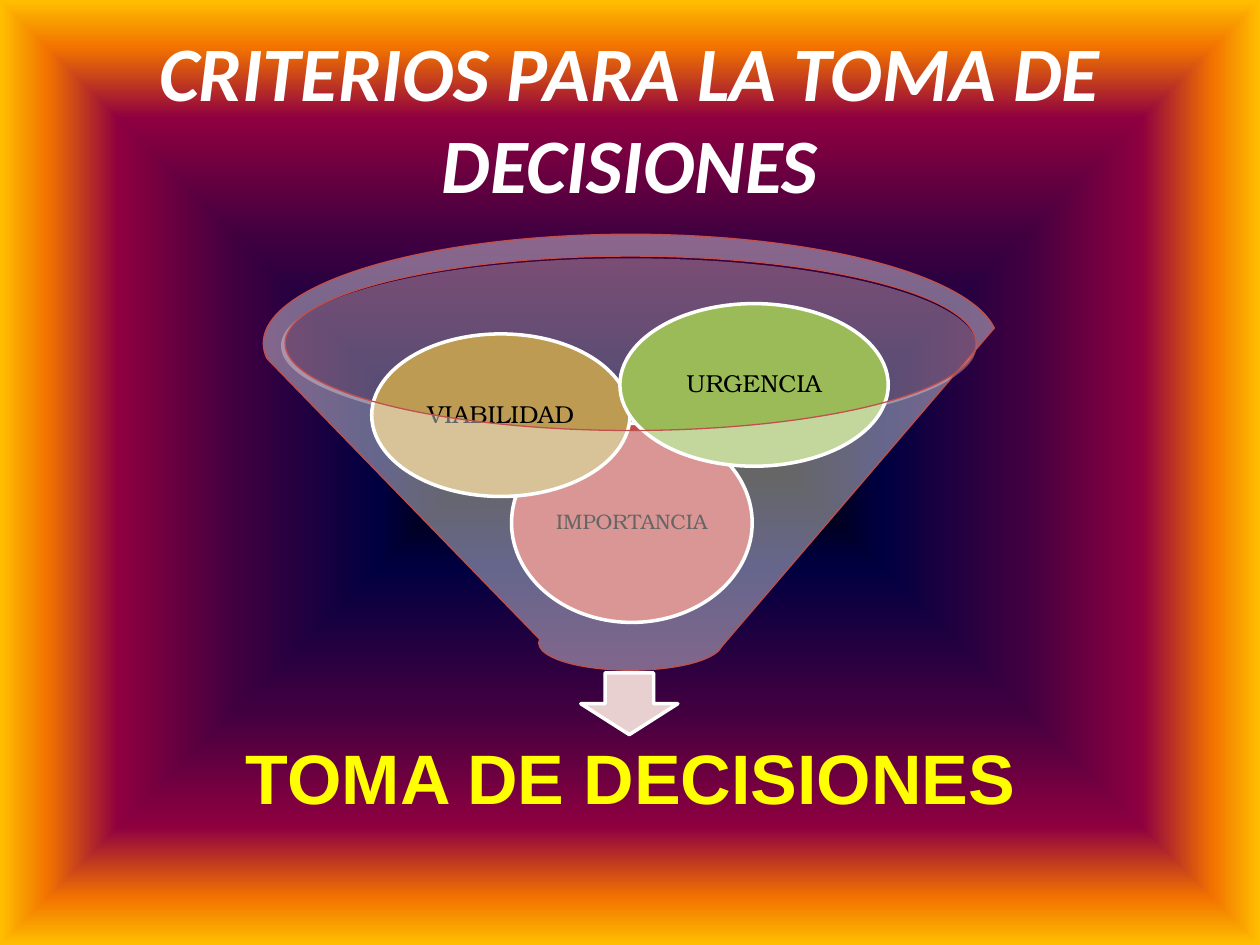
from lxml import etree
from pptx import Presentation
from pptx.dml.color import RGBColor
from pptx.enum import shapes, text
from pptx.oxml import parse_xml
from pptx.oxml.ns import nsdecls, qn
from pptx.util import Inches, Pt

COLORS = {
    "white": "FFFFFF", "black": "000000", "yellow": "FFFF00",
    "red": "C0504D", "tan": "BD9B53", "green": "9BBB59",
    "rim": "E2C2C2", "arrow": "E8D0D0",
}
BACKGROUND_STOPS = [(0, "000000"), (20, "000040"), (50, "400040"),
                    (75, "8F0040"), (90, "F27300"), (100, "FFBF00")]
# name, left, top, width, height, colour, text size
CRITERIA = [
    ("IMPORTANCIA", 4.06, 3.36, 1.91, 1.58, "red", 12),
    ("VIABILIDAD", 2.95, 2.65, 2.05, 1.29, "tan", 14),
    ("URGENCIA", 4.92, 2.41, 2.13, 1.29, "green", 14),
]


def rgb(name):
    return RGBColor.from_string(COLORS[name])


def set_background(page):
    """Fill the page with a gradient that spreads from its centre."""
    stops = "".join(
        f'<a:gs pos="{position * 1000}"><a:srgbClr val="{color}"/></a:gs>'
        for position, color in BACKGROUND_STOPS)
    background = parse_xml(
        f'<p:bg {nsdecls("p", "a")}><p:bgPr><a:gradFill rotWithShape="1">'
        f'<a:gsLst>{stops}</a:gsLst><a:path path="shape">'
        '<a:fillToRect l="50000" t="50000" r="50000" b="50000"/></a:path>'
        '</a:gradFill><a:effectLst/></p:bgPr></p:bg>')
    page.element.cSld.insert(0, background)


def add_figure(page, kind, place, fill, line=None, width=2, opacity=100):
    figure = page.shapes.add_shape(kind, *map(Inches, place))
    figure.shadow.inherit = False
    figure.fill.solid()
    figure.fill.fore_color.rgb = rgb(fill)
    if opacity < 100:
        color = figure.fill._xPr.find(".//" + qn("a:srgbClr"))
        etree.SubElement(color, qn("a:alpha"), val=str(opacity * 1000))
    if line:
        figure.line.color.rgb = rgb(line)
        figure.line.width = Pt(width)
    else:
        figure.line.fill.background()
    return figure


def write(shape, words, font, size, color, inset, spacing=0.9,
          bold=False, italic=False):
    """Put one centred paragraph in the middle of a shape."""
    frame = shape.text_frame
    frame.text = words
    frame.word_wrap = True
    frame.vertical_anchor = text.MSO_ANCHOR.MIDDLE
    frame.margin_left = frame.margin_right = Inches(inset)
    frame.margin_top = frame.margin_bottom = Inches(min(inset, 0.05))
    para = frame.paragraphs[0]
    para.alignment = text.PP_ALIGN.CENTER
    para.line_spacing = spacing
    span = para.runs[0].font
    span.name, span.size, span.color.rgb = font, Pt(size), rgb(color)
    span.bold, span.italic = bold, italic


def add_label(page, place, words, **style):
    box = page.shapes.add_textbox(*map(Inches, place))
    write(box, words, **style)


def add_funnel(page):
    kinds = shapes.MSO_SHAPE
    add_figure(page, kinds.OVAL, (2.23, 2.05, 5.52, 1.39), "rim", opacity=40)
    add_figure(page, kinds.DOWN_ARROW, (4.61, 5.34, 0.77, 0.49), "arrow", "white")
    add_label(page, (1.54, 5.74, 6.93, 0.93), "TOMA DE DECISIONES",
              font="Arial", size=40, color="yellow", inset=0.31, bold=True)
    for name, left, top, width, height, fill, size in CRITERIA:
        oval = add_figure(page, kinds.OVAL, (left, top, width, height), fill, "white")
        write(oval, name, "TeX Gyre Bonum", size, "black", inset=0.02)
    add_figure(page, kinds.FUNNEL, (2.09, 1.86, 5.83, 3.46), "white", "red",
               width=0.75, opacity=40)


def main():
    deck = Presentation()
    deck.slide_width, deck.slide_height = Inches(10), Inches(7.5)
    page = deck.slides.add_slide(deck.slide_layouts[6])
    set_background(page)
    add_label(page, (0.5, 0.3, 9, 1.25), "CRITERIOS PARA LA TOMA DE DECISIONES",
              font="Calibri", size=44, color="white", inset=0.1, spacing=1.0,
              bold=True, italic=True)
    add_funnel(page)
    deck.save("out.pptx")


if __name__ == "__main__":
    main()
